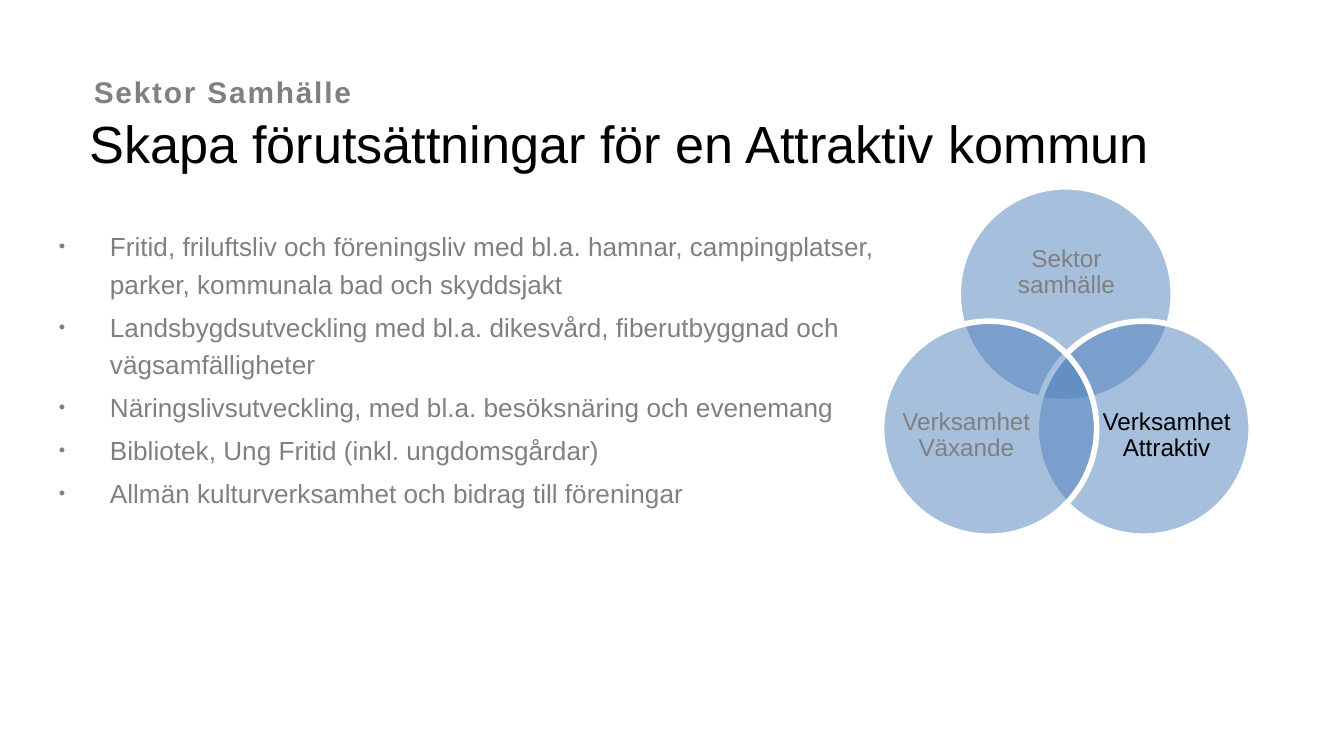
from lxml import etree
from pptx import Presentation
from pptx.dml.color import RGBColor
from pptx.enum.shapes import MSO_SHAPE
from pptx.enum.text import MSO_ANCHOR, PP_ALIGN
from pptx.oxml.ns import qn
from pptx.util import Inches, Pt

OVAL = MSO_SHAPE.OVAL
MIDDLE = MSO_ANCHOR.MIDDLE
CENTER = PP_ALIGN.CENTER
GREY, BLACK, WHITE, BLUE = "808080", "000000", "FFFFFF", "4F81BD"
WIDTH = 10
HEIGHT = WIDTH * 9 / 16
SIZE = 1.6

POINTS = [
    "Fritid, friluftsliv och föreningsliv med bl.a. hamnar, campingplatser, "
    "parker, kommunala bad och skyddsjakt",
    "Landsbygdsutveckling med bl.a. dikesvård, fiberutbyggnad och vägsamfälligheter",
    "Näringslivsutveckling, med bl.a. besöksnäring och evenemang",
    "Bibliotek, Ung Fritid (inkl. ungdomsgårdar)",
    "Allmän kulturverksamhet och bidrag till föreningar",
]

# Circle corner, label box, label, label colour
CIRCLES = [
    ((7.13, 1.39), (7.35, 1.67, 1.17, 0.72), "Sektor samhälle", GREY),
    ((7.71, 2.39), (8.2, 2.8, 0.96, 0.88), "Verksamhet Attraktiv", BLACK),
    ((6.56, 2.39), (6.71, 2.8, 0.96, 0.88), "Verksamhet Växande", GREY),
]


def color(code):
    return RGBColor.from_string(code)


def add_text(slide, box, lines, size, code, top=0.05, side=0.1):
    """Add a wrapped text box with one paragraph per line; return its frame."""
    frame = slide.shapes.add_textbox(*map(Inches, box)).text_frame
    frame.word_wrap = True
    frame.margin_top = frame.margin_bottom = Inches(top)
    frame.margin_left = frame.margin_right = Inches(side)
    frame.text = "\n".join(lines)
    for para in frame.paragraphs:
        for run in para.runs:
            run.font.name = "Arial"
            run.font.size = Pt(size)
            run.font.color.rgb = color(code)
    return frame


def add_bullet(para):
    props = para._p.get_or_add_pPr()
    props.set("marL", str(Inches(0.38)))
    props.set("indent", str(-Inches(0.38)))
    etree.SubElement(props, qn("a:buSzPct")).set("val", "70000")
    etree.SubElement(props, qn("a:buFont")).set("typeface", "Arial")
    etree.SubElement(props, qn("a:buChar")).set("char", "•")


def add_list(slide, box, lines):
    frame = add_text(slide, box, lines, 14, GREY)
    for i, para in enumerate(frame.paragraphs):
        add_bullet(para)
        para.line_spacing = 1.2
        para.space_before = Pt(2.8 if i else 0)


def add_circle(slide, left, top):
    shape = slide.shapes.add_shape(OVAL, *map(Inches, (left, top, SIZE, SIZE)))
    shape.shadow.inherit = False
    shape.fill.solid()
    shape.fill.fore_color.rgb = color(BLUE)
    tint = shape.fill._xPr.find(qn("a:solidFill"))[0]
    etree.SubElement(tint, qn("a:alpha")).set("val", "50000")
    shape.line.color.rgb = color(WHITE)
    shape.line.width = Pt(3)


def add_label(slide, box, text, code):
    frame = add_text(slide, box, [text], 13, code, top=0, side=0)
    frame.vertical_anchor = MIDDLE
    para = frame.paragraphs[0]
    para.alignment = CENTER
    para.line_spacing = 0.9


def main():
    deck = Presentation()
    deck.slide_width, deck.slide_height = Inches(WIDTH), Inches(HEIGHT)
    slide = deck.slides.add_slide(deck.slide_layouts[6])

    sector = add_text(slide, (0.6, 0.5, 7.03, 0.23), ["Sektor Samhälle"], 16, GREY)
    run = sector.paragraphs[0].runs[0]
    run.font.bold = True
    run._r.get_or_add_rPr().set("spc", "100")

    title = "Skapa förutsättningar för en Attraktiv kommun"
    add_text(slide, (0.57, 0.78, 9.06, 0.5), [title], 28, BLACK)
    add_list(slide, (0.34, 1.62, 6.67, 2.41), POINTS)

    for corner, box, text, code in CIRCLES:
        add_circle(slide, *corner)
        add_label(slide, box, text, code)

    deck.save("out.pptx")


if __name__ == "__main__":
    main()
